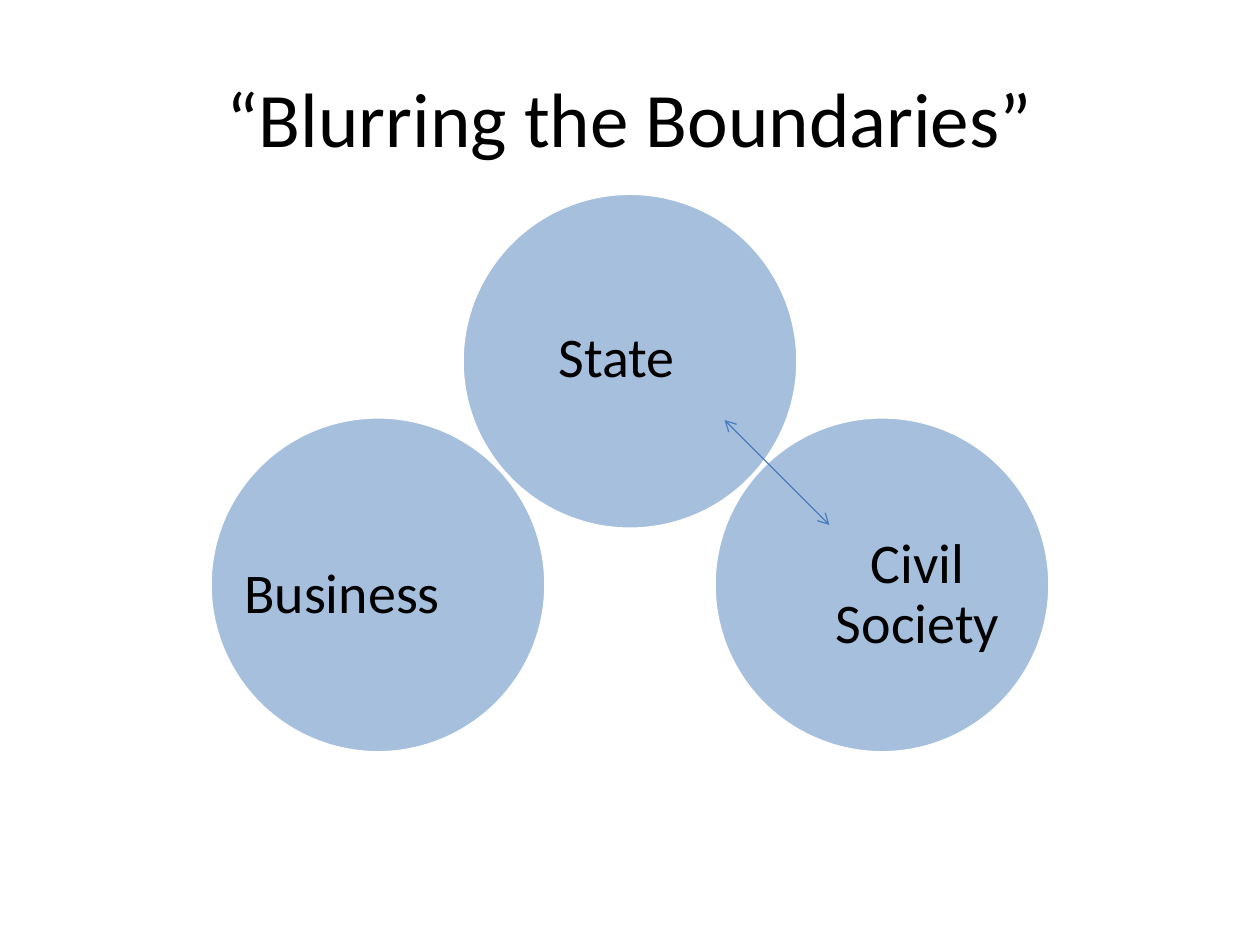
import dataclasses
import typing

import pptx
import pptx.dml.color
import pptx.enum.shapes
import pptx.enum.text
import pptx.oxml
import pptx.oxml.ns
import pptx.util

HUES = {"disc": "4F81BD", "edge": "FFFFFF", "arrow": "4B7EBC", "text": "000000"}
FONT = "Calibri"
COLS, ROWS = 120, 90  # grid cells over the slide
SIZE = 32  # disc diameter in cells
NS = pptx.oxml.ns.nsdecls("a")
Anchor = pptx.enum.text.MSO_ANCHOR
Align = pptx.enum.text.PP_ALIGN

deck = pptx.Presentation()
deck.slide_width = pptx.util.Inches(10)
deck.slide_height = pptx.util.Inches(7.5)
slide = deck.slides.add_slide(deck.slide_layouts[6])


class Box(typing.NamedTuple):
    col: float
    row: float
    wide: float
    high: float


@dataclasses.dataclass
class Disc:
    col: float
    row: float
    label: str = ""
    area: typing.Optional[Box] = None


def across(cols: float) -> int:
    return round(deck.slide_width * cols / COLS)


def down(rows: float) -> int:
    return round(deck.slide_height * rows / ROWS)


def place(box: Box) -> tuple:
    return across(box.col), down(box.row), across(box.wide), down(box.high)


def color(name: str) -> pptx.dml.color.RGBColor:
    return pptx.dml.color.RGBColor.from_string(HUES[name])


def write(text: str, box: Box, *, size=32, align=Align.CENTER,
          anchor=Anchor.MIDDLE, inset=None, lead=None) -> None:
    frame = slide.shapes.add_textbox(*place(box)).text_frame
    frame.word_wrap = True
    frame.vertical_anchor = anchor
    if inset is not None:
        frame.margin_left = frame.margin_right = inset
        frame.margin_top = frame.margin_bottom = inset
    para = frame.paragraphs[0]
    para.alignment = align
    para.line_spacing = lead
    run = para.add_run()
    run.text = text
    run.font.name = FONT
    run.font.size = pptx.util.Pt(size)
    run.font.color.rgb = color("text")


def draw(disc: Disc) -> None:
    oval = slide.shapes.add_shape(
        pptx.enum.shapes.MSO_SHAPE.OVAL,
        *place(Box(disc.col, disc.row, SIZE, SIZE)))
    oval.shadow.inherit = False
    oval.fill.solid()
    oval.fill.fore_color.rgb = color("disc")
    tint = oval.fill._xPr.find(".//" + pptx.oxml.ns.qn("a:srgbClr"))
    tint.append(pptx.oxml.parse_xml(f'<a:alpha {NS} val="50000"/>'))
    oval.line.color.rgb = color("edge")
    oval.line.width = pptx.util.Pt(2)
    if disc.area:
        write(disc.label, disc.area, inset=0, lead=0.9)


def link(col: float, row: float, end: float, base: float) -> None:
    line = slide.shapes.add_connector(
        pptx.enum.shapes.MSO_CONNECTOR.STRAIGHT,
        across(col), down(row), across(end), down(base))
    line.line.color.rgb = color("arrow")
    line.line.width = pptx.util.Pt(0.75)
    for tip in ("headEnd", "tailEnd"):
        line.line._get_or_add_ln().append(
            pptx.oxml.parse_xml(f'<a:{tip} {NS} type="arrow"/>'))
    line._element.spPr.append(pptx.oxml.parse_xml(f"<a:effectLst {NS}/>"))


# Title
write("“Blurring the Boundaries”", Box(6, 3.6, 108, 15), size=44)

# Three sectors
TOP, LOW = 18.4, 39.7
MID = (COLS - SIZE) / 2
STEP = 24
for disc in (
    Disc(MID, TOP),
    Disc(MID + STEP, LOW, "Civil Society", Box(77.8, 47.9, 19.2, 17.6)),
    Disc(MID - STEP, LOW, "Business", Box(23, 47.9, 19.2, 17.6)),
):
    draw(disc)
write("State", Box(52, 30, 15, 7.7), align=Align.LEFT, anchor=Anchor.TOP)

# Exchange between state and civil society
link(69, 40, 79, 50)

deck.save("out.pptx")
